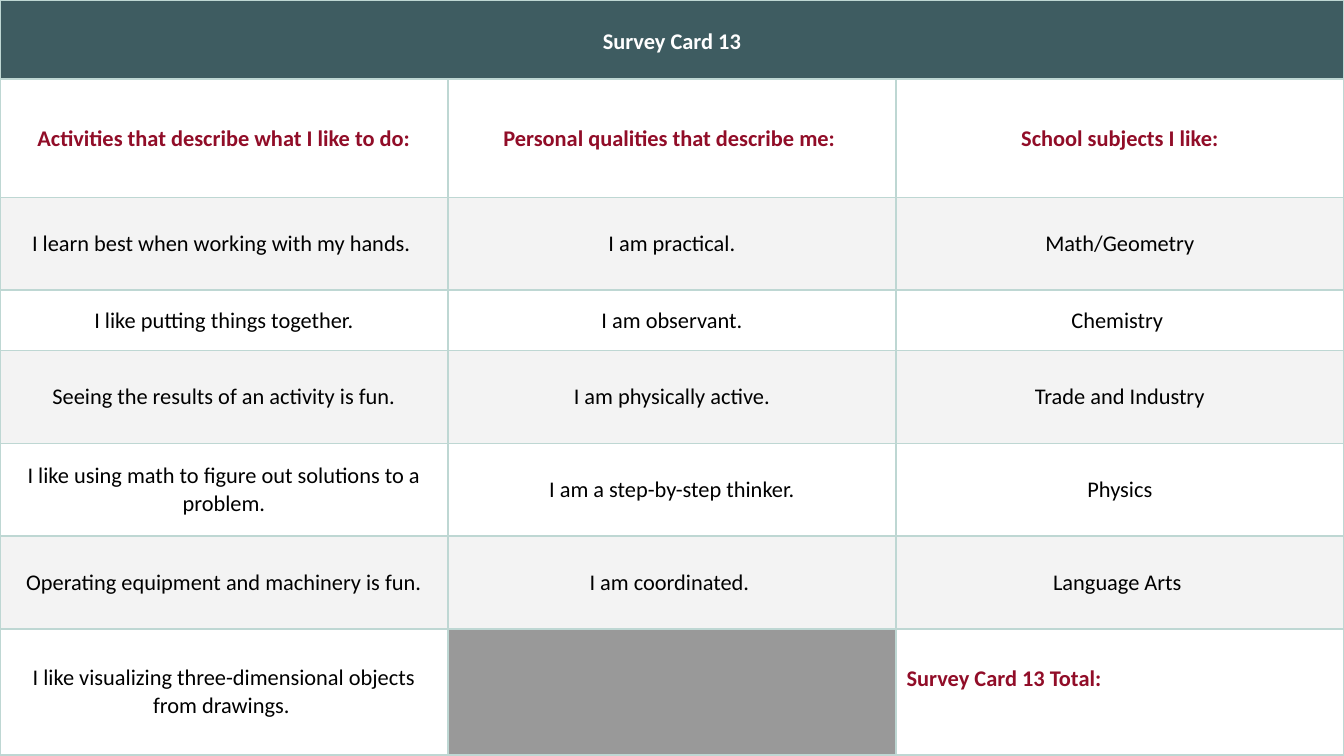
import pptx
import pptx.dml.color
import pptx.enum.text
import pptx.oxml
import pptx.oxml.ns
import pptx.util
from pptx.util import Inches

COLORS = {
    "title": "3E5C61", "heading": "910D28", "text": "000000", "white": "FFFFFF",
    "band": "F3F3F3", "blocked": "999999", "border": "BED7D3",
}
ROWS = [
    ("Survey Card 13", "", ""),
    ("Activities that describe what I like to do:", "Personal qualities that describe me: ",
     "School subjects I like:"),
    ("I learn best when working with my hands. ", "I am practical.", "Math/Geometry"),
    ("I like putting things together.", "I am observant.", "Chemistry "),
    ("Seeing the results of an activity is fun.", "I am physically active.", "Trade and Industry"),
    ("I like using math to figure out solutions to a problem.", "I am a step-by-step thinker.",
     "Physics"),
    ("Operating equipment and machinery is fun.", "I am coordinated. ", "Language Arts "),
    ("I like visualizing three-dimensional objects from drawings. ", "", "Survey Card 13 Total:"),
]
ROW_HEIGHTS = [0.59, 0.88, 0.69, 0.45, 0.69, 0.69, 0.69, 0.94]
COLUMNS = 3


def rgb(name):
    return pptx.dml.color.RGBColor.from_string(COLORS[name])


def add_borders(cell):
    properties = cell._tc.get_or_add_tcPr()
    for position, side in enumerate(("lnL", "lnR", "lnT", "lnB")):
        properties.insert(position, pptx.oxml.parse_xml(
            f'<a:{side} {pptx.oxml.ns.nsdecls("a")} w="12700"><a:solidFill>'
            f'<a:srgbClr val="{COLORS["border"]}"/></a:solidFill></a:{side}>'))


# Widescreen 16:9 page
presentation = pptx.Presentation()
presentation.slide_width = Inches(10)
presentation.slide_height = Inches(10 * 9 / 16)
slide = presentation.slides.add_slide(presentation.slide_layouts[6])

# Survey grid filling the slide
survey = slide.shapes.add_table(
    len(ROWS), COLUMNS, 0, 0, Inches(10), Inches(sum(ROW_HEIGHTS))).table
for column in survey.columns:
    column.width = Inches(10 / COLUMNS)
for row, height in zip(survey.rows, ROW_HEIGHTS):
    row.height = Inches(height)

# Wording, banding and borders
for r, wording in enumerate(ROWS):
    for c, words in enumerate(wording):
        cell = survey.cell(r, c)
        cell.margin_left = cell.margin_right = Inches(0.08)
        cell.margin_top = cell.margin_bottom = Inches(0.08)
        cell.vertical_anchor = pptx.enum.text.MSO_ANCHOR.MIDDLE
        cell.fill.solid()
        cell.fill.fore_color.rgb = rgb("band" if r in (2, 4, 6) else "white")
        add_borders(cell)
        if not words:
            continue

        cell.text = words
        line = cell.text_frame.paragraphs[0]
        line.alignment = pptx.enum.text.PP_ALIGN.CENTER
        line.font.name = "Calibri"
        line.font.size = pptx.util.Pt(12)
        line.font.bold = r < 2
        line.font.color.rgb = rgb("heading" if r == 1 else "text")
        if r == 1:
            line.space_before = pptx.util.Pt(10)

# Title bar across all columns
title = survey.cell(0, 0)
title.merge(survey.cell(0, COLUMNS - 1))
title.fill.fore_color.rgb = rgb("title")
title_line = title.text_frame.paragraphs[0]
title_line.font.color.rgb = rgb("white")
title_line.line_spacing = 1.15
title_line.space_after = pptx.util.Pt(6)

# Blocked cell and total in the last row
survey.cell(len(ROWS) - 1, 1).fill.fore_color.rgb = rgb("blocked")
total = survey.cell(len(ROWS) - 1, 2)
total.margin_bottom = Inches(0.28)
total_line = total.text_frame.paragraphs[0]
total_line.alignment = pptx.enum.text.PP_ALIGN.LEFT
total_line.space_before = pptx.util.Pt(10)
total_line.font.bold = True
total_line.font.color.rgb = rgb("heading")

presentation.save("out.pptx")
